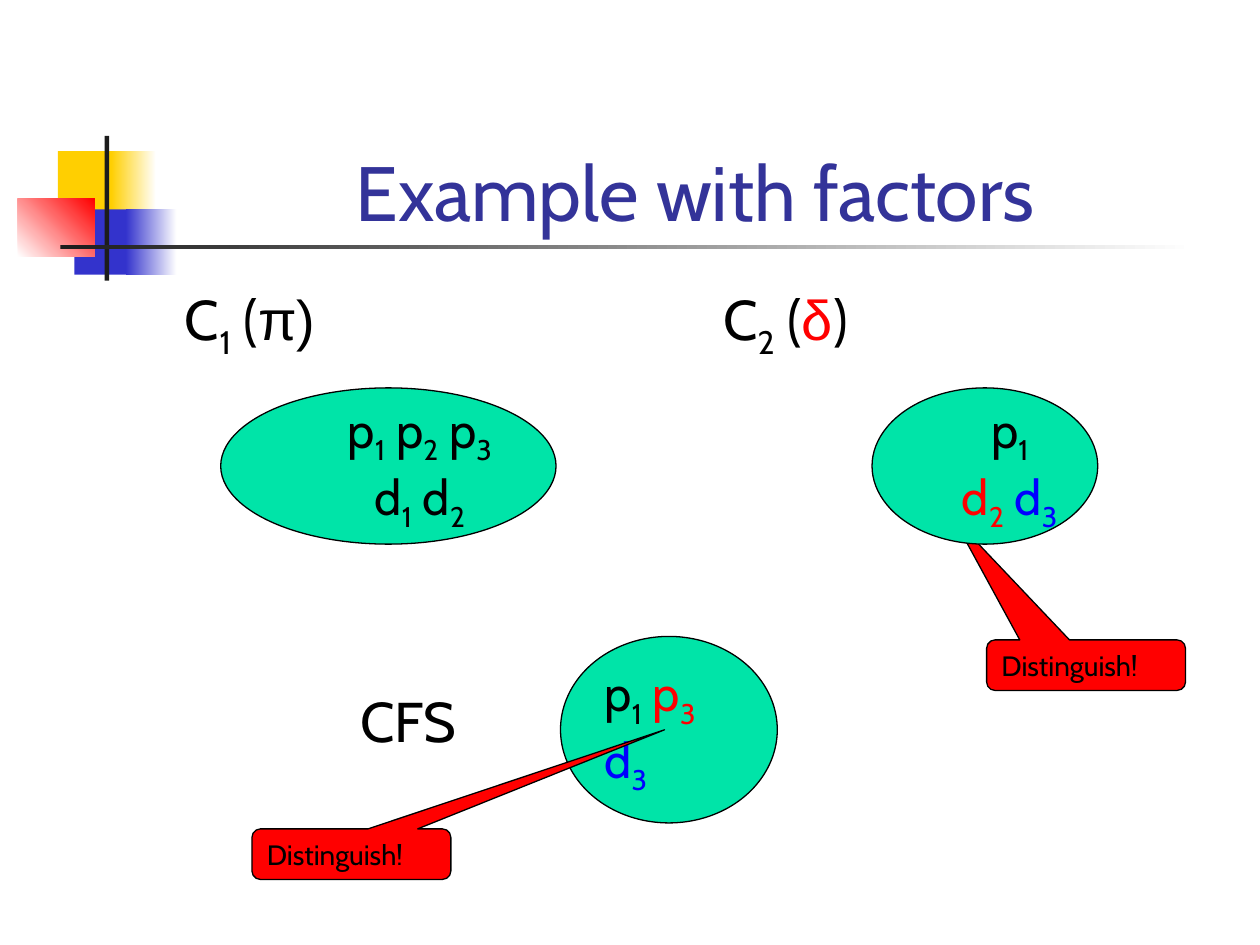
import pptx
import pptx.util
import pptx.dml.color
import pptx.enum.shapes
import pptx.enum.text

Cm = pptx.util.Cm
SHAPE = pptx.enum.shapes.MSO_SHAPE
ALIGN = pptx.enum.text.PP_ALIGN
ANCHOR = pptx.enum.text.MSO_ANCHOR

COLORS = {
    "yellow": "FFCF01", "blue": "3333CC", "red": "FF0000", "dark": "1C1C1C",
    "white": "FFFFFF", "black": "000000", "title": "333399",
    "green": "00E4A8", "bright blue": "0000FF",
}

# Content: a run is (text, colour, font), the last two optional; "_" marks a subscript
TITLE = "Example with factors"
CALLOUT_TEXT = "Distinguish!"

# Ornament: box in cm, colours (two make a gradient), gradient angle
ORNAMENT = [
    ((1.17, 3.05, 1.22, 1.32), ["yellow"], 0),
    ((2.24, 3.05, 0.91, 1.32), ["yellow", "white"], 0),
    ((1.5, 4.22, 1.17, 1.32), ["blue"], 0),
    ((2.54, 4.22, 1.02, 1.32), ["blue", "white"], 0),
    ((0.36, 4.01, 1.55, 1.17), ["white", "red"], 45),
    ((2.11, 2.74, 0.09, 2.92), ["dark"], 0),
    ((1.22, 4.94, 22.86, 0.09), ["dark", "white"], 0),
]

# Headings: left and top in cm, runs
HEADINGS = [
    (3.48, 5.61, [("C",), ("_1",), (" (",), ("π)", "black", "Arial")]),
    (14.33, 5.61, [("C",), ("_2",), (" (",), ("δ", "red", "Arial"), (")",)]),
    (7.01, 13.72, [("CFS",)]),
]

# Sets: box in cm, left and right inset, alignment, lines of runs
CFS_SET = ((11.3, 12.83, 4.37, 3.76), 0.25, 0.25, ALIGN.LEFT, [
    [("p",), ("_1",), (" p", "red"), ("_3", "red")],
    [("d", "bright blue"), ("_3", "bright blue")],
])
C1_SET = ((4.45, 7.82, 6.76, 3.15), 1.27, 0, ALIGN.CENTER, [
    [("p",), ("_1",), (" p",), ("_2",), (" p",), ("_3",)],
    [("d",), ("_1",), (" d",), ("_2",)],
])
C2_SET = ((17.58, 7.82, 4.55, 3.15), 1.0, 0, ALIGN.CENTER, [
    [("p",), ("_1",)],
    [("d", "red"), ("_2", "red"), (" d", "bright blue"), ("_3", "bright blue")],
])

# Callouts: left and top in cm, tip offset as a share of the size
CALLOUT_SIZE = (4.01, 1.02)
CALLOUTS = [(5.08, 16.71, (1.574, -2.458)), (19.89, 12.9, (-0.671, -2.935))]


def rgb(name):
    return pptx.dml.color.RGBColor.from_string(COLORS[name])


def write(frame, lines, size=28, color="black", align=ALIGN.LEFT,
          anchor=ANCHOR.MIDDLE, left=0.25, right=0.25):
    frame.word_wrap = True
    frame.vertical_anchor = anchor
    frame.margin_left, frame.margin_right = Cm(left), Cm(right)
    for number, line in enumerate(lines):
        paragraph = frame.add_paragraph() if number else frame.paragraphs[0]
        paragraph.alignment = align
        for text, *style in line:
            run = paragraph.add_run()
            run.text = text.lstrip("_")
            run.font.size = pptx.util.Pt(size)
            run.font.color.rgb = rgb(style[0] if style else color)
            run.font.name = style[1] if len(style) > 1 else "Cabin"
            if text.startswith("_"):
                run.font._element.set("baseline", "-25000")


def add_shape(slide, kind, box, colors, angle=0, outlined=True):
    shape = slide.shapes.add_shape(kind, *map(Cm, box))
    shape.shadow.inherit = False
    if len(colors) == 1:
        shape.fill.solid()
        shape.fill.fore_color.rgb = rgb(colors[0])
    else:
        shape.fill.gradient()
        shape.fill.gradient_angle = angle
        for stop, color in zip(shape.fill.gradient_stops, colors):
            stop.color.rgb = rgb(color)
    if outlined:
        shape.line.color.rgb = rgb("black")
        shape.line.width = pptx.util.Pt(0.75)
    else:
        shape.line.fill.background()
    return shape


def add_set(slide, box, left, right, align, lines):
    ellipse = add_shape(slide, SHAPE.OVAL, box, ["green"])
    write(ellipse.text_frame, lines, align=align, left=left, right=right)


def main():
    deck = pptx.Presentation()
    deck.slide_width, deck.slide_height = Cm(25.4), Cm(19.05)
    slide = deck.slides.add_slide(deck.slide_layouts[5])

    # Title and ornament
    title = slide.shapes.title
    title.left, title.top, title.width, title.height = map(
        Cm, (3.2, 1.73, 21.64, 3.18))
    write(title.text_frame, [[(TITLE,)]], size=44, color="title",
          align=ALIGN.CENTER, anchor=ANCHOR.BOTTOM)
    for box, colors, angle in ORNAMENT:
        add_shape(slide, SHAPE.RECTANGLE, box, colors, angle, outlined=False)

    # Headings
    for left, top, runs in HEADINGS:
        heading = slide.shapes.add_textbox(Cm(left), Cm(top), Cm(5), Cm(1.6))
        write(heading.text_frame, [runs], size=32, anchor=ANCHOR.TOP)

    # Sets and callouts; the C2 set covers the tip of its callout
    add_set(slide, *CFS_SET)
    add_set(slide, *C1_SET)
    for left, top, tip in CALLOUTS:
        callout = add_shape(slide, SHAPE.ROUNDED_RECTANGULAR_CALLOUT,
                            (left, top, *CALLOUT_SIZE), ["red"])
        callout.adjustments[0], callout.adjustments[1] = tip
        write(callout.text_frame, [[(CALLOUT_TEXT,)]], size=16)
    add_set(slide, *C2_SET)

    deck.save("out.pptx")


if __name__ == "__main__":
    main()
